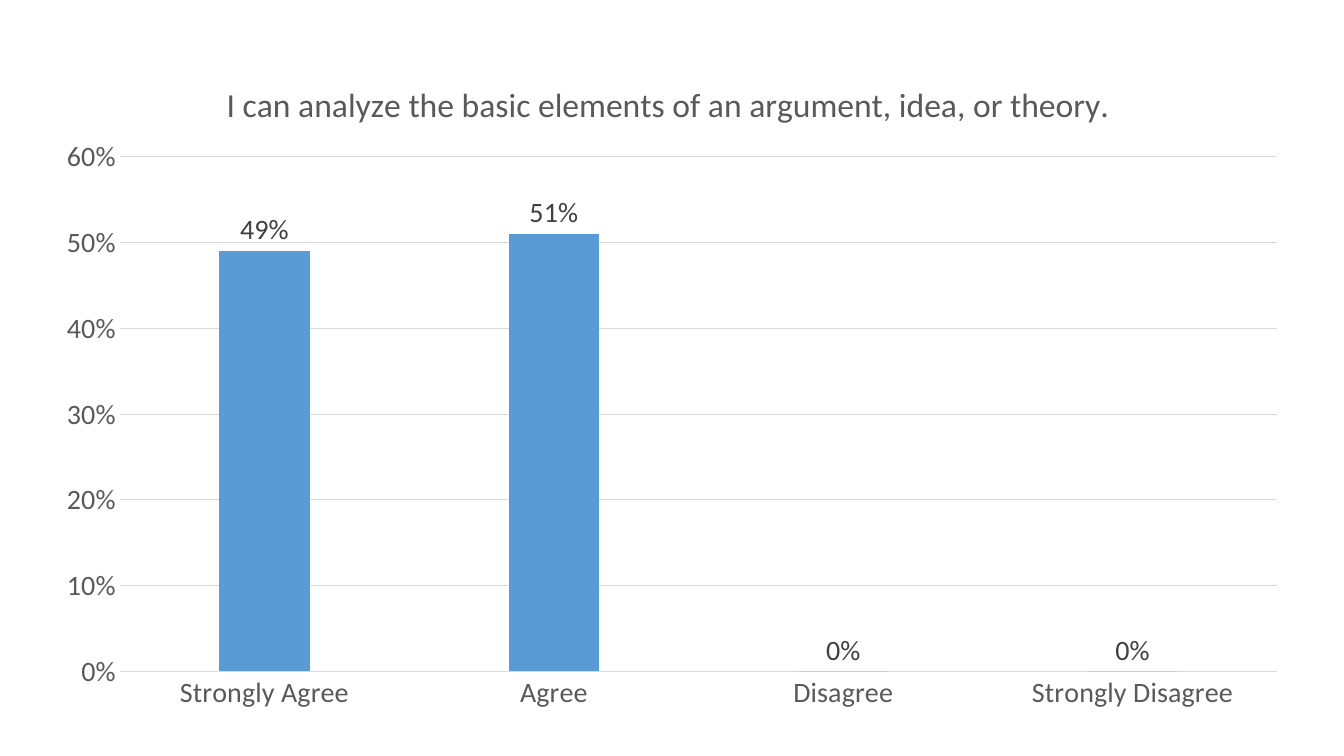
from dataclasses import dataclass

import pptx
import pptx.chart.data
import pptx.dml.color
import pptx.enum.chart
import pptx.oxml
import pptx.oxml.ns
import pptx.util
from pptx.util import Inches

BLUE = pptx.dml.color.RGBColor(0x5B, 0x9B, 0xD5)
GRID_GRAY = pptx.dml.color.RGBColor(0xD9, 0xD9, 0xD9)
TEXT_GRAY = pptx.dml.color.RGBColor(0x59, 0x59, 0x59)
LABEL_GRAY = pptx.dml.color.RGBColor(0x40, 0x40, 0x40)
FONT = "Calibri"
QUESTION = "I can analyze the basic elements of an argument, idea, or theory."


@dataclass
class Answer:
    label: str
    share: float


ANSWERS = [
    Answer("Strongly Agree", 0.49),
    Answer("Agree", 0.51),
    Answer("Disagree", 0),
    Answer("Strongly Disagree", 0),
]


def style_font(font, size: float, color: pptx.dml.color.RGBColor) -> None:
    font.name = FONT
    font.size = pptx.util.Pt(size)
    font.bold = False
    font.color.rgb = color


def style_line(line) -> None:
    line.color.rgb = GRID_GRAY
    line.width = pptx.util.Pt(0.75)


def set_layout(parent, index: int, target: str = "", **fractions: float) -> None:
    """Place a chart part by fractions of the chart's size."""
    for old in parent.findall(pptx.oxml.ns.qn("c:layout")):
        parent.remove(old)
    inner = f'<c:layoutTarget val="{target}"/>' if target else ""
    inner += "".join(f'<c:{k}Mode val="edge"/>' for k in "xy")
    inner += "".join(f'<c:{k} val="{v}"/>' for k, v in fractions.items())
    parent.insert(index, pptx.oxml.parse_xml(
        f'<c:layout {pptx.oxml.ns.nsdecls("c")}>'
        f"<c:manualLayout>{inner}</c:manualLayout></c:layout>"))


def add_answer_chart(s) -> None:
    data = pptx.chart.data.CategoryChartData(number_format="0%")
    data.categories = [a.label for a in ANSWERS]
    data.add_series("Series 1", [a.share for a in ANSWERS])
    chart = s.shapes.add_chart(
        pptx.enum.chart.XL_CHART_TYPE.COLUMN_CLUSTERED,
        Inches(0.44), Inches(0.48), Inches(12.48), Inches(6.72), data).chart
    style_font(chart.font, 20, TEXT_GRAY)
    chart.has_legend = False

    chart.has_title = True
    title = chart.chart_title
    title.include_in_layout = False
    p = title.text_frame.paragraphs[0]
    p.text = QUESTION
    style_font(p.runs[0].font, 24, TEXT_GRAY)
    set_layout(title._element, 1, x=0.14, y=0.04)

    plot = chart.plots[0]
    plot.gap_width = 219
    plot.overlap = -27
    plot.vary_by_categories = False
    series = plot.series[0]
    series.format.fill.solid()
    series.format.fill.fore_color.rgb = BLUE
    labels = series.data_labels
    labels.show_value = True
    labels.position = pptx.enum.chart.XL_LABEL_POSITION.OUTSIDE_END
    labels.number_format = "0%"
    labels.number_format_is_linked = False
    style_font(labels.font, 20, LABEL_GRAY)
    set_layout(chart._chartSpace.chart.plotArea, 0, "inner",
               x=0.06, y=0.16, w=0.92, h=0.76)

    for axis in (chart.category_axis, chart.value_axis):
        axis.major_tick_mark = pptx.enum.chart.XL_TICK_MARK.NONE
        axis.minor_tick_mark = pptx.enum.chart.XL_TICK_MARK.NONE
        style_font(axis.tick_labels.font, 20, TEXT_GRAY)
    style_line(chart.category_axis.format.line)
    value_axis = chart.value_axis
    value_axis.format.line.fill.background()
    value_axis.minimum_scale = 0
    value_axis.maximum_scale = 0.6
    value_axis.major_unit = 0.1
    value_axis.tick_labels.number_format = "0%"
    value_axis.tick_labels.number_format_is_linked = False
    style_line(value_axis.major_gridlines.format.line)


def main() -> None:
    prs = pptx.Presentation()
    prs.slide_width = Inches(13.33)
    prs.slide_height = Inches(7.5)
    s = prs.slides.add_slide(prs.slide_layouts.get_by_name("Blank"))
    add_answer_chart(s)
    prs.save("out.pptx")


if __name__ == "__main__":
    main()
